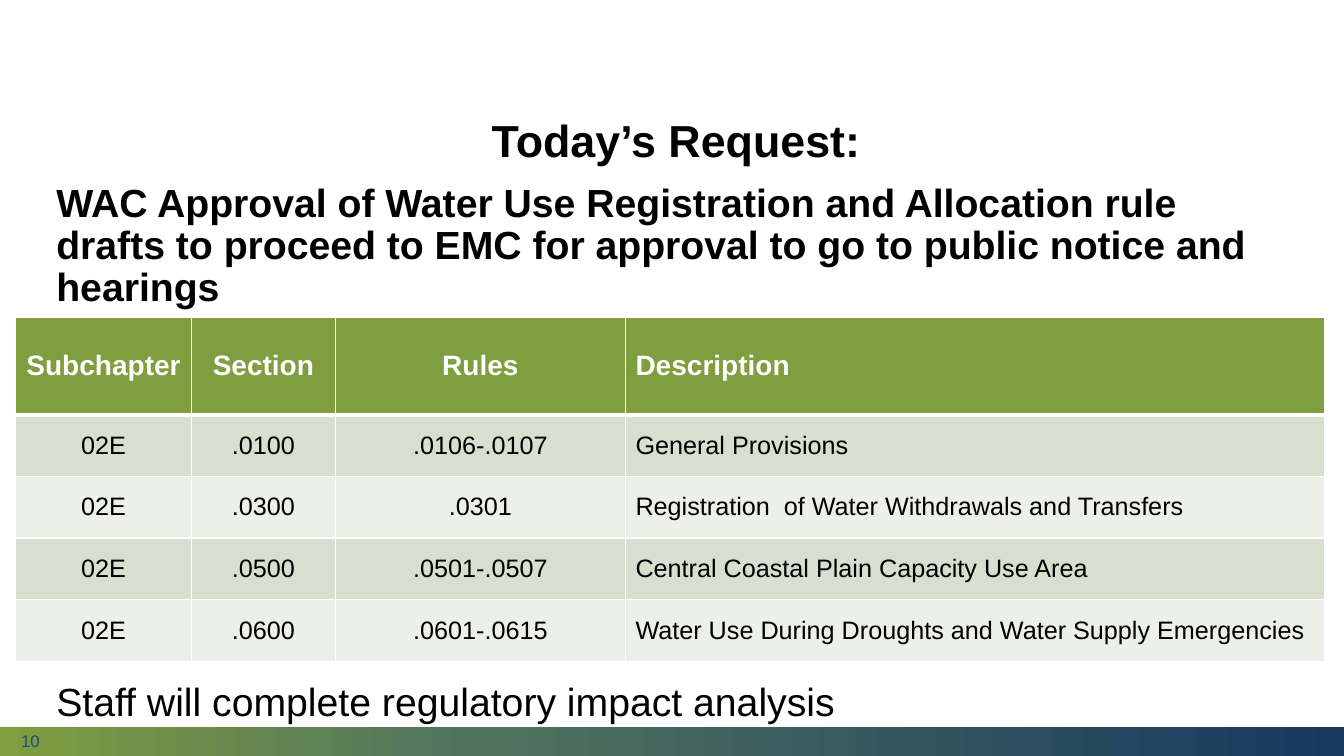
from lxml import etree
from copy import deepcopy
from pptx import Presentation
from pptx.dml.color import RGBColor
from pptx.enum.shapes import MSO_SHAPE
from pptx.enum.text import MSO_ANCHOR, PP_ALIGN
from pptx.oxml.ns import qn
from pptx.util import Pt

LEFT, CENTER = PP_ALIGN.LEFT, PP_ALIGN.CENTER
TOP, MIDDLE = MSO_ANCHOR.TOP, MSO_ANCHOR.MIDDLE
FONT = "Arial"
BLACK, WHITE, NAVY = "000000", "FFFFFF", "1F497D"
GREEN, BANDS = "7F9E3F", ("D8DFCF", "ECF0E8")

# Content
TITLE = "Today’s Request:"
REQUEST = ("WAC Approval of Water Use Registration and Allocation rule drafts "
           "to proceed to EMC for approval to go to public notice and hearings")
NEXT_STEP = "Staff will complete regulatory impact analysis"
PAGE_NUMBER = "10"
RULES = [
    ("Subchapter", "Section", "Rules", "Description"),
    ("02E", ".0100", ".0106-.0107", "General Provisions"),
    ("02E", ".0300", ".0301", "Registration  of Water Withdrawals and Transfers"),
    ("02E", ".0500", ".0501-.0507", "Central Coastal Plain Capacity Use Area"),
    ("02E", ".0600", ".0601-.0615",
     "Water Use During Droughts and Water Supply Emergencies"),
]
COLUMN_WIDTHS = (125.6, 102.8, 207.2, 499.4)
HEADER_HEIGHT, ROW_HEIGHT = 69.2, 44.1
FOOTER_STOPS = [(0, GREEN), (0.35, "4F745E"), (1, "183860")]


def color(value):
    return RGBColor.from_string(value)


def style_text(frame, size, ink, bold=False, align=LEFT, spacing=1.0):
    for para in frame.paragraphs:
        para.alignment = align
        para.line_spacing = spacing
        for span in para.runs:
            span.font.name = FONT
            span.font.size = Pt(size)
            span.font.bold = bold
            span.font.color.rgb = color(ink)


def add_text(page, text, area, size, ink, anchor=TOP, **style):
    box = page.shapes.add_textbox(*map(Pt, area))
    frame = box.text_frame
    frame.word_wrap = True
    frame.vertical_anchor = anchor
    frame.text = text
    style_text(frame, size, ink, **style)


def add_footer(page):
    bar = page.shapes.add_shape(MSO_SHAPE.RECTANGLE, Pt(0), Pt(519), Pt(960), Pt(21))
    bar.shadow.inherit = False
    bar.line.fill.background()
    bar.fill.gradient()
    bar.fill.gradient_angle = 0
    stops = bar.fill._fill._gradFill.find(qn("a:gsLst"))
    stops.append(deepcopy(stops[-1]))
    for stop, (position, value) in zip(bar.fill.gradient_stops, FOOTER_STOPS):
        stop.position = position
        stop.color.rgb = color(value)


def set_borders(cell, widths):
    properties = cell._tc.get_or_add_tcPr()
    for index, (side, width) in enumerate(widths.items()):
        line = etree.Element(qn("a:ln" + side), w=str(Pt(width)))
        fill = etree.SubElement(line, qn("a:solidFill"))
        etree.SubElement(fill, qn("a:srgbClr"), val=WHITE)
        properties.insert(index, line)


def add_rules_table(page):
    table = page.shapes.add_table(
        len(RULES), len(COLUMN_WIDTHS), Pt(11.2), Pt(227), Pt(sum(COLUMN_WIDTHS)),
        Pt(HEADER_HEIGHT + ROW_HEIGHT * (len(RULES) - 1))).table
    for column, width in zip(table.columns, COLUMN_WIDTHS):
        column.width = Pt(width)
    for r, values in enumerate(RULES):
        header = r == 0
        table.rows[r].height = Pt(HEADER_HEIGHT if header else ROW_HEIGHT)
        for c, value in enumerate(values):
            cell = table.cell(r, c)
            cell.text = value
            cell.vertical_anchor = MIDDLE
            cell.fill.solid()
            cell.fill.fore_color.rgb = color(GREEN if header else BANDS[(r - 1) % 2])
            style_text(cell.text_frame, 20 if header else 18,
                       WHITE if header else BLACK, bold=header,
                       align=LEFT if c == len(values) - 1 else CENTER)
            set_borders(cell, {"L": 1, "R": 1, "T": 3 if r == 1 else 1,
                               "B": 3 if header else 1})


def main():
    deck = Presentation()
    deck.slide_width, deck.slide_height = Pt(960), Pt(540)
    page = deck.slides.add_slide(deck.slide_layouts[6])

    # Footer bar and page number
    add_footer(page)
    add_text(page, PAGE_NUMBER, (8, 518.4, 216, 21.6), 12, NAVY, MIDDLE)

    # Title and request
    add_text(page, TITLE, (69, 76.3, 828, 51), 32, BLACK, MIDDLE,
             bold=True, align=CENTER, spacing=0.9)
    add_text(page, REQUEST, (33.2, 127.4, 885.6, 98), 28, BLACK,
             bold=True, spacing=0.9)

    # Rules table and next step
    add_rules_table(page)
    add_text(page, NEXT_STEP, (33.2, 484, 885.6, 36), 28, BLACK, spacing=0.9)

    deck.save("out.pptx")


if __name__ == "__main__":
    main()
